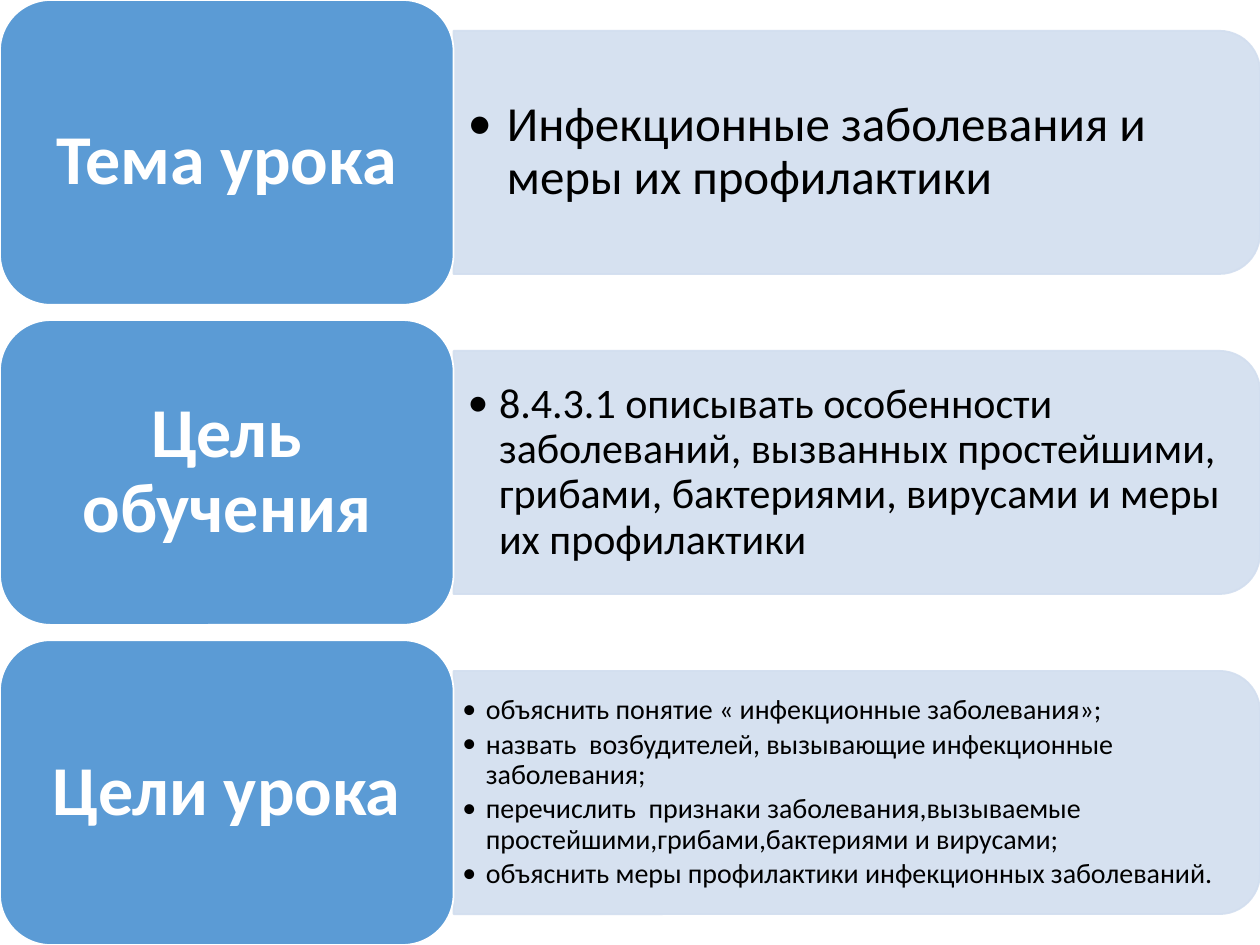
from lxml.etree import SubElement
from pptx import Presentation
from pptx.dml.color import RGBColor
from pptx.enum.shapes import MSO_SHAPE as SHAPE
from pptx.enum.text import MSO_ANCHOR as ANCHOR, PP_ALIGN as ALIGN
from pptx.oxml.ns import qn
from pptx.util import Pt

COLORS = {"label": "5B9BD5", "panel": "D2DEEF", "white": "FFFFFF", "text": "000000"}
WIDTH, HEIGHT = 720, 540
LABEL_W, LABEL_H, PANEL_H = 259.2, 174.2, 139
ROWS = [
    ("Тема урока", 11, 28, 22.5, 8, ["Инфекционные заболевания и меры их профилактики"]),
    ("Цель обучения", 0, 24, 18, 8, [
        "8.4.3.1 описывать особенности заболеваний, вызванных простейшими, "
        "грибами, бактериями, вирусами и меры их профилактики"]),
    ("Цели урока", 0, 16, 13.5, 5, [
        "объяснить понятие « инфекционные заболевания»;",
        "назвать  возбудителей, вызывающие инфекционные заболевания;",
        "перечислить  признаки заболевания,вызываемые "
        "простейшими,грибами,бактериями и вирусами;",
        "объяснить меры профилактики инфекционных заболеваний."]),
]


def rgb(name):
    """Return the named colour."""
    return RGBColor.from_string(COLORS[name])


def add_block(s, kind, x, y, w, h, fill, line):
    """Add a filled shape with a thin outline."""
    sp = s.shapes.add_shape(kind, Pt(x), Pt(y), Pt(w), Pt(h))
    sp.shadow.inherit = False
    sp.fill.solid()
    sp.fill.fore_color.rgb = rgb(fill)
    sp.line.color.rgb = rgb(line)
    sp.line.width = Pt(1)
    return sp


def set_frame(tf, dx, dy, extra_top=0):
    """Set wrapping, middle anchor and insets of a text frame."""
    tf.word_wrap = True
    tf.vertical_anchor = ANCHOR.MIDDLE
    tf.margin_left = tf.margin_right = Pt(dx)
    tf.margin_top, tf.margin_bottom = Pt(dy + extra_top), Pt(dy)


def style(p, size, color, bold=False):
    """Set the font and line spacing of a paragraph."""
    p.line_spacing = 0.9
    for r in p.runs:
        r.font.name, r.font.size, r.font.bold = "Calibri", Pt(size), bold
        r.font.color.rgb = rgb(color)


def add_label(s, x, y, w, h, text, drop):
    """Add the rounded heading block of a row."""
    sp = add_block(s, SHAPE.ROUNDED_RECTANGLE, x, y, w, h, "label", "white")
    tf = sp.text_frame
    set_frame(tf, 21, 14, drop)
    tf.text = text
    p = tf.paragraphs[0]
    p.alignment = ALIGN.CENTER
    style(p, 40, "white", True)


def add_panel(s, x, y, w, h, size, indent, inset, items):
    """Add the pale panel of a row with its bulleted text."""
    sp = add_block(s, SHAPE.ROUND_2_SAME_RECTANGLE, x + (w - h) / 2, y + (h - w) / 2,
                   h, w, "panel", "panel")
    sp.rotation = 90
    for clr in sp._element.spPr.iter(qn("a:srgbClr")):
        SubElement(clr, qn("a:alpha"), val="90000")
    tf = s.shapes.add_textbox(Pt(x), Pt(y + 6.8), Pt(w - 6.8), Pt(h - 13.6)).text_frame
    set_frame(tf, inset, inset / 2)
    tf.text = "\n".join(items)
    for p in tf.paragraphs:
        pPr = p._p.get_or_add_pPr()
        pPr.set("marL", str(Pt(indent)))
        pPr.set("indent", str(-Pt(indent)))
        SubElement(pPr, qn("a:buFont"), typeface="Calibri")
        SubElement(pPr, qn("a:buChar"), char="•")
        p.level = 1
        p.space_after = Pt(size * 0.15)
        style(p, size, "text")


def add_row(s, y, label, drop, size, indent, inset, items):
    """Add one row: the panel and the heading block over its left edge."""
    add_panel(s, LABEL_W, y + (LABEL_H - PANEL_H) / 2, WIDTH - LABEL_W, PANEL_H,
              size, indent, inset, items)
    add_label(s, 0, y, LABEL_W, LABEL_H, label, drop)


def main():
    """Build the slide and save it."""
    prs = Presentation()
    prs.slide_width, prs.slide_height = Pt(WIDTH), Pt(HEIGHT)
    s = prs.slides.add_slide(prs.slide_layouts[6])
    pitch = (HEIGHT - LABEL_H) / (len(ROWS) - 1)
    for i, row in enumerate(ROWS):
        add_row(s, i * pitch, *row)
    prs.save("out.pptx")


if __name__ == "__main__":
    main()
